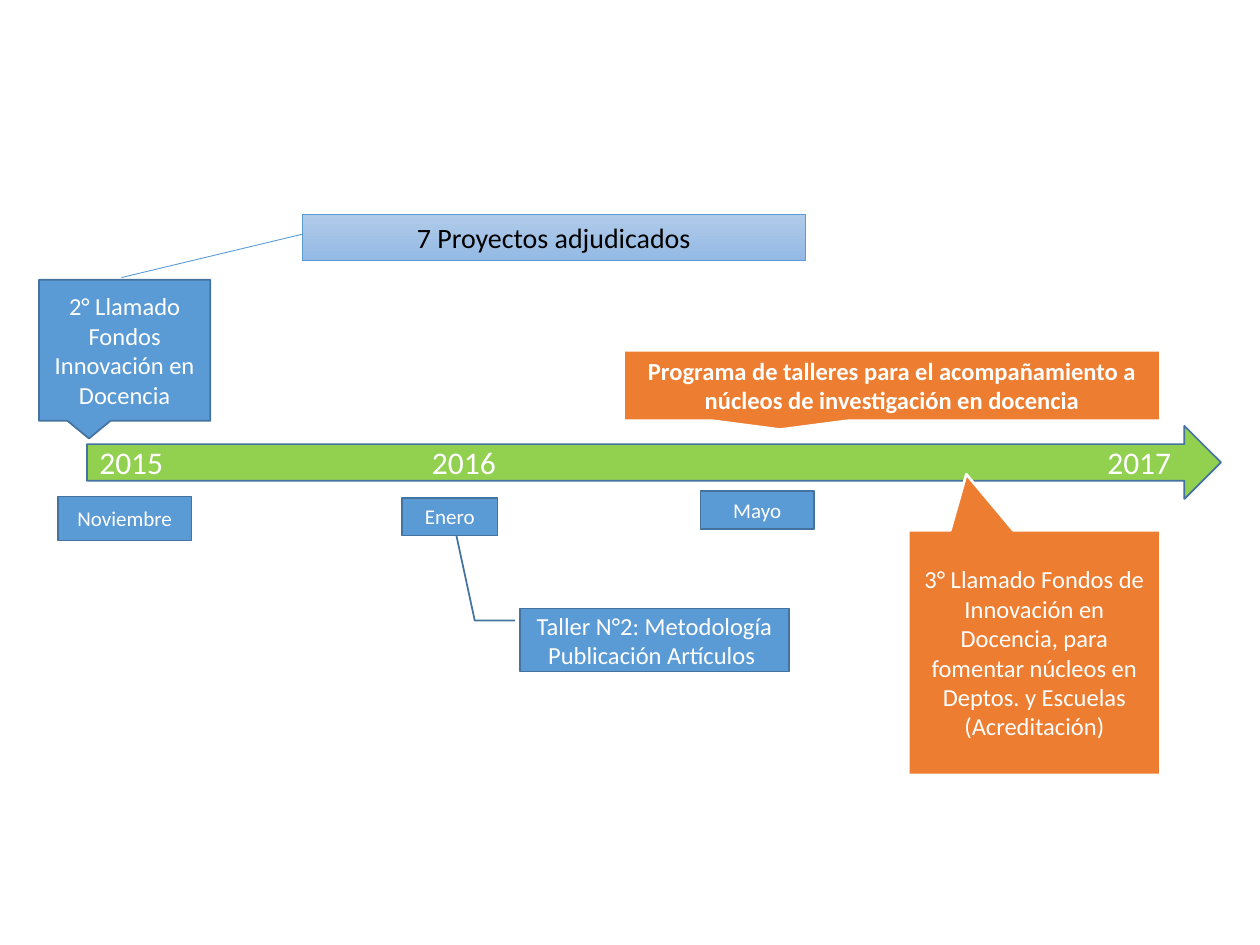
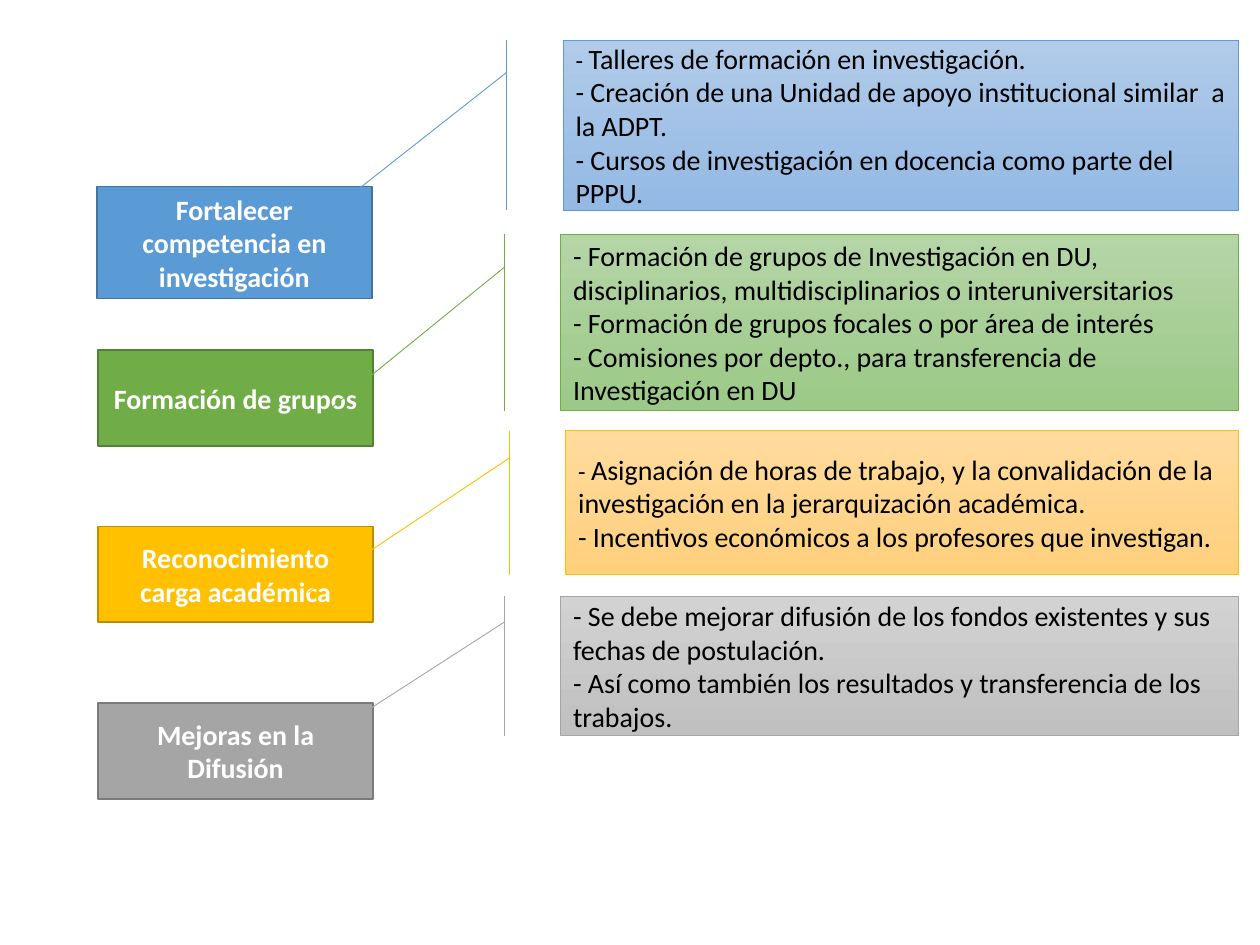
from lxml.etree import SubElement
from pptx import Presentation
from pptx.dml.color import RGBColor
from pptx.enum.shapes import MSO_SHAPE as SHAPE
from pptx.enum.text import MSO_ANCHOR as ANCHOR, PP_ALIGN as ALIGN
from pptx.oxml.ns import qn
from pptx.util import Inches, Pt

COLS, ROWS = 100, 75
WHITE, BLACK = "FFFFFF", "000000"
BLUE, NAVY, ORANGE, LIME = "5B9BD5", "43739E", "ED7D31", "92D050"
GREEN, GOLD, GREY = "70AD47", "FFC000", "A5A5A5"
SHADES = {
    BLUE: ("B1CBE9", "93B9E4"),
    GREEN: ("B5D5A7", "9CC987"),
    GOLD: ("FFDB9E", "FFD07C"),
    GREY: ("D2D2D2", "C0C0C0"),
}


def rgb(value):
    return RGBColor.from_string(value)


class Deck:
    font = "Calibri"

    def __init__(self):
        self.prs = Presentation()
        self.prs.slide_width, self.prs.slide_height = Inches(10), Inches(7.5)
        self.slide = None

    def x(self, cols):
        return round(self.prs.slide_width * cols / COLS)

    def y(self, rows):
        return round(self.prs.slide_height * rows / ROWS)

    def new_slide(self):
        self.slide = self.prs.slides.add_slide(self.prs.slide_layouts[6])

    def shape(self, kind, at, line, weight, adj=()):
        left, top, width, height = at
        sp = self.slide.shapes.add_shape(
            kind, self.x(left), self.y(top), self.x(width), self.y(height))
        sp.shadow.inherit = False
        sp.line.color.rgb = rgb(line)
        sp.line.width = Pt(weight)
        for i, value in enumerate(adj):
            sp.adjustments[i] = value
        sp.text_frame.word_wrap = True
        sp.text_frame.vertical_anchor = ANCHOR.MIDDLE
        return sp

    def format(self, p, size, color, bold=False, align=ALIGN.CENTER):
        p.alignment = align
        for r in p.runs:
            r.font.name = self.font
            r.font.size = Pt(size)
            r.font.bold = bold
            r.font.color.rgb = rgb(color)

    def solid(self, kind, at, text, size, fill=BLUE, line=NAVY, weight=1,
              bold=False, adj=()):
        sp = self.shape(kind, at, line, weight, adj)
        sp.fill.solid()
        sp.fill.fore_color.rgb = rgb(fill)
        sp.text_frame.text = text
        self.format(sp.text_frame.paragraphs[0], size, WHITE, bold)
        return sp

    def shaded(self, kind, at, color, adj=()):
        sp = self.shape(kind, at, color, 0.5, adj)
        sp.fill.gradient()
        sp.fill.gradient_angle = 270
        for stop, shade in zip(sp.fill.gradient_stops, SHADES[color]):
            stop.color.rgb = rgb(shade)
        return sp

    def label(self, at, text):
        self.solid(SHAPE.RECTANGLE, at, text, 12)

    def note(self, at, text, color, adj):
        sp = self.shaded(SHAPE.LINE_CALLOUT_1, at, color, adj)
        sp.text_frame.text = text
        self.format(sp.text_frame.paragraphs[0], 16, BLACK)

    def timeline(self, at, years, stops):
        sp = self.solid(SHAPE.RIGHT_ARROW, at, "\t".join(years), 18, LIME)
        p = sp.text_frame.paragraphs[0]
        p.alignment = ALIGN.LEFT
        tabs = SubElement(p._p.get_or_add_pPr(), qn("a:tabLst"))
        for stop in stops:
            SubElement(tabs, qn("a:tab"), pos=str(self.x(stop)), algn="l")

    def actions(self, at, lines, color, dash_size):
        sp = self.shaded(SHAPE.LINE_CALLOUT_1_BORDER_AND_ACCENT_BAR, at, color)
        tf = sp.text_frame
        for i, line in enumerate(lines):
            p = tf.add_paragraph() if i else tf.paragraphs[0]
            p.text = "- "
            p.add_run().text = line
            self.format(p, 16, BLACK, align=ALIGN.LEFT)
        tf.paragraphs[0].runs[0].font.size = Pt(dash_size)


def build_timeline(deck):
    deck.new_slide()
    deck.timeline((6.9, 33.8, 90, 5.8), ("2015", "2016", "2017"), (26.4, 80))
    wedge = SHAPE.RECTANGULAR_CALLOUT
    deck.solid(wedge, (3.1, 22.2, 13.6, 11.2),
               "2° Llamado Fondos Innovación en Docencia", 14)
    deck.solid(wedge, (49.5, 27.8, 42.6, 5.6),
               "Programa de talleres para el acompañamiento a núcleos de "
               "investigación en docencia", 14, ORANGE, WHITE, 1.5, True)
    deck.solid(SHAPE.LINE_CALLOUT_2, (41.3, 48.3, 21.3, 5),
               "Taller N°2: Metodología Publicación Artículos ", 14,
               adj=(0.19, -0.02, 0.19, -0.17, -1.39, -0.25))
    deck.label((4.6, 39.4, 10.6, 3.5), "Noviembre")
    deck.label((31.9, 39.5, 7.6, 3), "Enero")
    deck.label((55.6, 39, 9, 3), "Mayo")
    deck.note((24, 17, 39.9, 3.7), "7 Proyectos adjudicados", BLUE,
              (0.43, 0, 1.36, -0.36))
    deck.solid(wedge, (72.1, 42.1, 20, 19.4),
               "3° Llamado Fondos de Innovación en Docencia, para fomentar "
               "núcleos en Deptos. y Escuelas (Acreditación)",
               14, ORANGE, WHITE, 1.5, adj=(-0.27, -0.73))


def build_proposals(deck):
    deck.new_slide()
    right = 98.3
    proposals = (
        ("Fortalecer competencia en investigación", BLUE, NAVY,
         (7.7, 14.8, 21.8, 8.9), (44.7, 3.2, 13.5), 14,
         ("Talleres de formación en investigación.",
          "Creación de una Unidad de apoyo institucional similar  a la ADPT.",
          "Cursos de investigación en docencia como parte del PPPU.")),
        ("Formación de grupos", GREEN, "538035",
         (7.8, 27.8, 21.8, 7.6), (44.5, 18.6, 14), 16,
         ("Formación de grupos de Investigación en DU, disciplinarios, "
          "multidisciplinarios o interuniversitarios",
          "Formación de grupos focales o por área de interés",
          "Comisiones por depto., para transferencia de Investigación en DU")),
        ("Reconocimiento carga académica", GOLD, "BD8E00",
         (7.8, 41.8, 21.8, 7.6), (44.9, 34.2, 11.4), 14,
         ("Asignación de horas de trabajo, y la convalidación de la "
          "investigación en la jerarquización académica.",
          "Incentivos económicos a los profesores que investigan.")),
        ("Mejoras en la Difusión", GREY, "7A7A7A",
         (7.8, 55.8, 21.8, 7.6), (44.5, 47.3, 11.1), 16,
         ("Se debe mejorar difusión de los fondos existentes y sus fechas "
          "de postulación.",
          "Así como también los resultados y transferencia de los trabajos.")),
    )
    for goal, color, edge, box, (left, top, height), dash, lines in proposals:
        deck.solid(SHAPE.RECTANGLE, box, goal, 16, color, edge, bold=True)
        deck.actions((left, top, right - left, height), lines, color, dash)


def main():
    deck = Deck()
    build_timeline(deck)
    build_proposals(deck)
    deck.prs.save("out.pptx")


if __name__ == "__main__":
    main()
